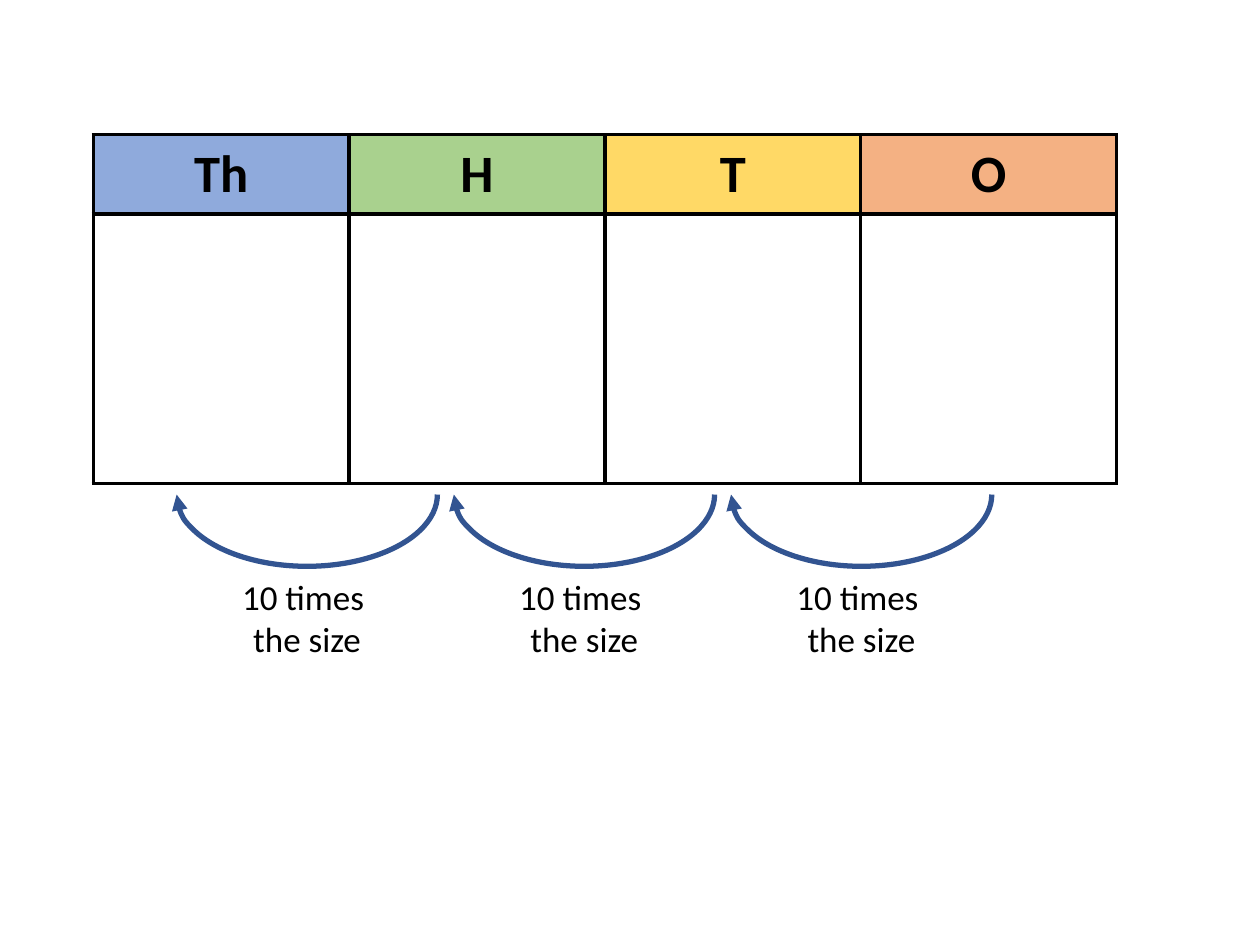
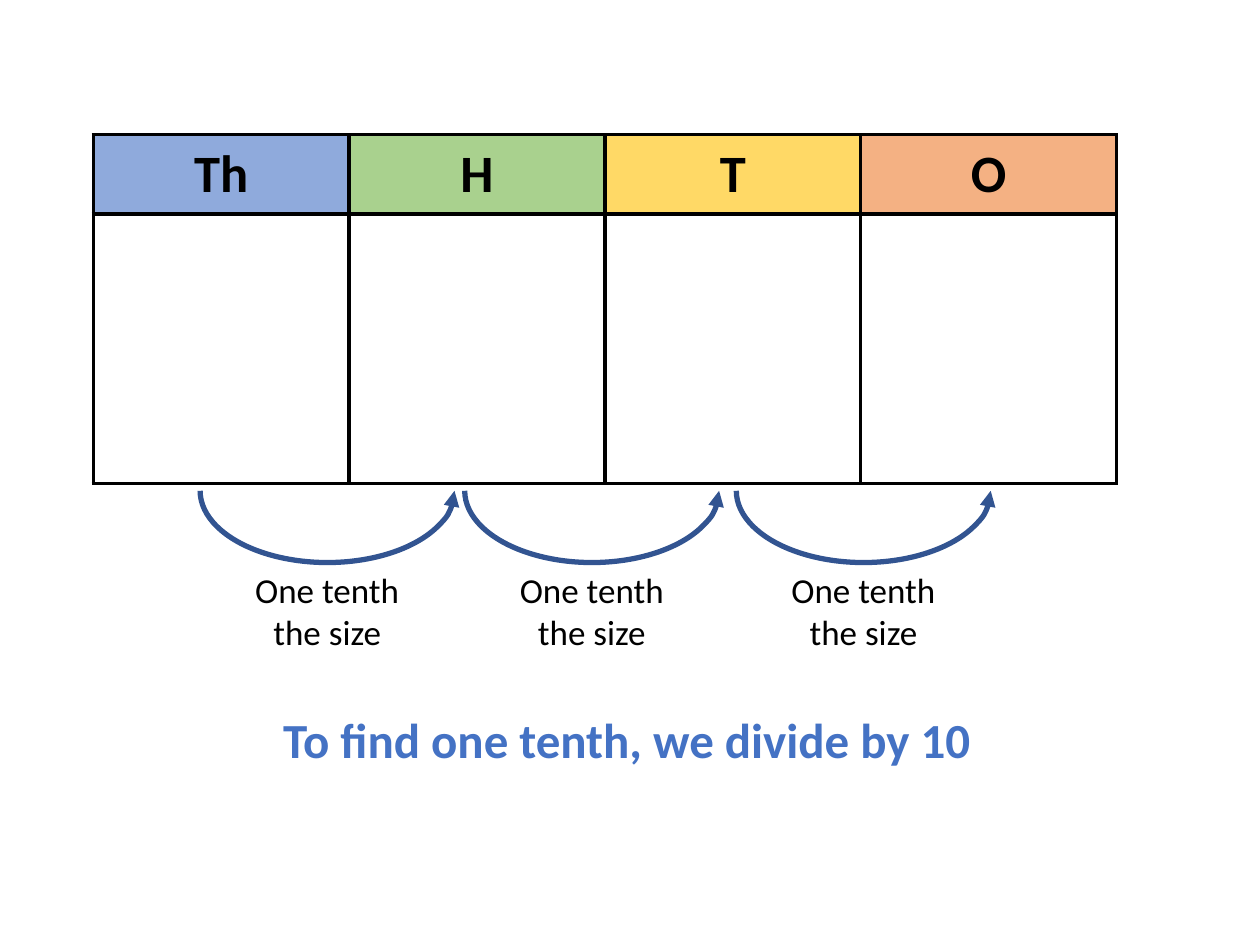
"""Build two place value slides showing ten times and one tenth relations."""
from lxml.etree import SubElement
from pptx import Presentation
from pptx.dml.color import RGBColor
from pptx.enum.shapes import MSO_SHAPE
from pptx.enum.text import MSO_ANCHOR, MSO_AUTO_SIZE, PP_ALIGN
from pptx.oxml.ns import qn
from pptx.util import Pt

FONT = "Calibri"
BLACK = "000000"
ARC_BLUE = "325491"
RULE_BLUE = "4472C4"

PLACES = [("Th", "8FAADC"), ("H", "A9D18E"), ("T", "FFD966"), ("O", "F4B183")]
TABLE_LEFT, TABLE_TOP = 53.3, 77
COLUMN_WIDTH = 146.2
ROW_HEIGHTS = [45.4, 154]
ARC_DEPTH = 41
LABEL_HEIGHT = 55.4

SLIDES = [
    {
        "label": ["10 times ", "the size"],
        "bracket": MSO_SHAPE.LEFT_BRACKET,
        "mirrored": True,
        "arc_centers": [492.3, 333.9, 175.5],
        "arc_span": 149,
        "arc_top": 282.6,
        "label_top": 325.4,
        "label_width": 93.6,
        "rule": None,
    },
    {
        "label": ["One tenth", "the size"],
        "bracket": MSO_SHAPE.RIGHT_BRACKET,
        "mirrored": False,
        "arc_centers": [493.4, 338.2, 187],
        "arc_span": 145.4,
        "arc_top": 280.5,
        "label_top": 321.1,
        "label_width": 112,
        "rule": "To find one tenth, we divide by 10",
    },
]


def color(value):
    return RGBColor.from_string(value)


def style_paragraph(paragraph, size, font_color=BLACK, bold=False):
    paragraph.alignment = PP_ALIGN.CENTER
    paragraph.font.name = FONT
    paragraph.font.size = Pt(size)
    paragraph.font.bold = bold
    paragraph.font.color.rgb = color(font_color)


def add_borders(cell):
    properties = cell._tc.get_or_add_tcPr()
    for side in ("lnL", "lnR", "lnT", "lnB"):
        line = SubElement(properties, qn(f"a:{side}"), w=str(int(Pt(2.25))))
        fill = SubElement(line, qn("a:solidFill"))
        SubElement(fill, qn("a:srgbClr"), val=BLACK)


def add_place_table(slide):
    frame = slide.shapes.add_table(
        len(ROW_HEIGHTS), len(PLACES), Pt(TABLE_LEFT), Pt(TABLE_TOP),
        Pt(COLUMN_WIDTH * len(PLACES)), Pt(sum(ROW_HEIGHTS)))
    table = frame.table
    table.first_row = table.horz_banding = False
    for row, height in zip(table.rows, ROW_HEIGHTS):
        row.height = Pt(height)
    for column, (place, fill_color) in enumerate(PLACES):
        table.columns[column].width = Pt(COLUMN_WIDTH)
        header, body = table.cell(0, column), table.cell(1, column)
        for cell in (header, body):
            add_borders(cell)
            cell.vertical_anchor = MSO_ANCHOR.MIDDLE
            cell.margin_left = cell.margin_right = Pt(8.6)
            cell.margin_top = cell.margin_bottom = Pt(4.3)
        header.fill.solid()
        header.fill.fore_color.rgb = color(fill_color)
        body.fill.background()
        header.text = place
        style_paragraph(header.text_frame.paragraphs[0], 30, bold=True)


def add_arc(slide, content, center):
    span = content["arc_span"]
    middle = content["arc_top"] + ARC_DEPTH / 2
    arc = slide.shapes.add_shape(
        content["bracket"], Pt(center - ARC_DEPTH / 2), Pt(middle - span / 2),
        Pt(ARC_DEPTH), Pt(span))
    arc.adjustments[0] = span / ARC_DEPTH / 2
    arc.rotation = 90
    if content["mirrored"]:
        arc._element.spPr.xfrm.set("flipH", "1")
    arc.shadow.inherit = False
    arc.fill.background()
    arc.line.color.rgb = color(ARC_BLUE)
    arc.line.width = Pt(3)
    SubElement(arc.line._get_or_add_ln(), qn("a:headEnd"), type="triangle")


def add_text(slide, lines, center, top, width, height, size, **style):
    box = slide.shapes.add_textbox(
        Pt(center - width / 2), Pt(top), Pt(width), Pt(height))
    frame = box.text_frame
    frame.word_wrap = True
    frame.auto_size = MSO_AUTO_SIZE.SHAPE_TO_FIT_TEXT
    frame.text = "\n".join(lines)
    for paragraph in frame.paragraphs:
        style_paragraph(paragraph, size, **style)


def main():
    presentation = Presentation()
    presentation.slide_width, presentation.slide_height = Pt(720), Pt(540)
    for content in SLIDES:
        slide = presentation.slides.add_slide(presentation.slide_layouts[6])
        add_place_table(slide)
        for center in content["arc_centers"]:
            add_arc(slide, content, center)
        for center in content["arc_centers"]:
            add_text(slide, content["label"], center, content["label_top"],
                     content["label_width"], LABEL_HEIGHT, 20)
        if content["rule"]:
            add_text(slide, [content["rule"]], 358, 401.8, 416, 41, 28,
                     font_color=RULE_BLUE, bold=True)
    presentation.save("out.pptx")


if __name__ == "__main__":
    main()
